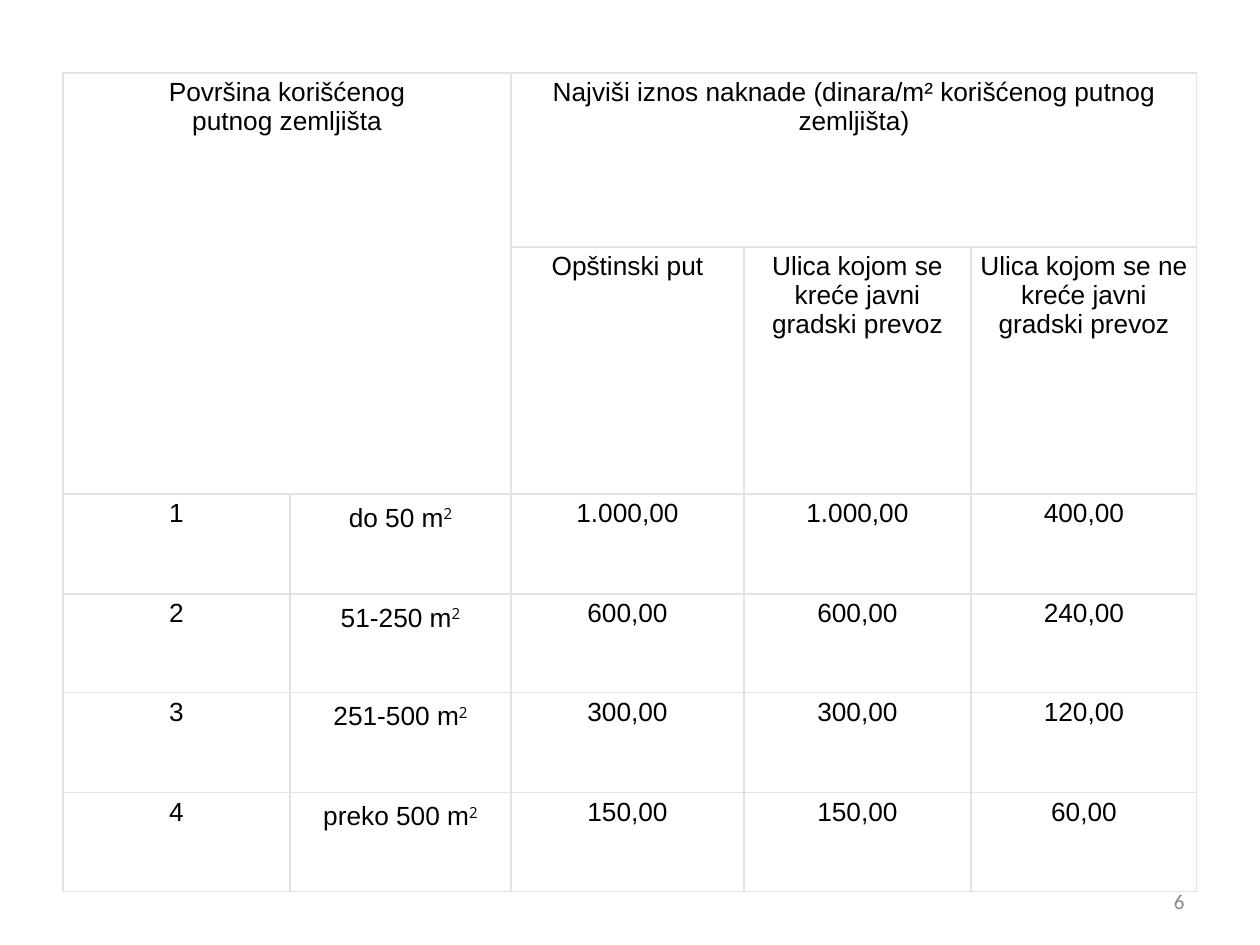
from dataclasses import dataclass

from lxml import etree
from pptx import Presentation
from pptx.dml.color import RGBColor
from pptx.enum.text import MSO_ANCHOR, PP_ALIGN
from pptx.oxml.ns import qn
from pptx.util import Emu, Pt

CENTER, RIGHT = PP_ALIGN.CENTER, PP_ALIGN.RIGHT
TOP, MIDDLE = MSO_ANCHOR.TOP, MSO_ANCHOR.MIDDLE
PX_PER_INCH = 126
COLORS = {"text": "000000", "number": "898989", "border": "E2E2E2", "cell": "FFFFFF"}

COL_WIDTHS = (227, 221, 233, 227, 226)
ROW_HEIGHTS = (174, 247, 100, 99, 100, 99)
CELL_MARGIN = 5


@dataclass(frozen=True)
class Header:
    row: int
    col: int
    lines: tuple[str, ...]
    row_span: int = 1
    col_span: int = 1


@dataclass(frozen=True)
class Rate:
    area: str
    municipal_road: str
    transit_street: str
    other_street: str


HEADERS = (
    Header(0, 0, ("Površina korišćenog", "putnog zemljišta"), 2, 2),
    Header(0, 2, ("Najviši iznos naknade (dinara/m² korišćenog putnog zemljišta)",), 1, 3),
    Header(1, 2, ("Opštinski put",)),
    Header(1, 3, ("Ulica kojom se kreće javni gradski prevoz",)),
    Header(1, 4, ("Ulica kojom se ne kreće javni gradski prevoz",)),
)
RATES = (
    Rate("do 50 m", "1.000,00", "1.000,00", "400,00"),
    Rate("51-250 m", "600,00", "600,00", "240,00"),
    Rate("251-500 m", "300,00", "300,00", "120,00"),
    Rate("preko 500 m", "150,00", "150,00", "60,00"),
)


def px(n: int) -> Emu:
    return Emu(round(n * 914400 / PX_PER_INCH))


def add_run(p, text: str, size: int = 15, font: str = "Arial", color: str = "text"):
    r = p.add_run()
    r.text = text
    r.font.size = Pt(size)
    r.font.name = font
    r.font.color.rgb = RGBColor.from_string(COLORS[color])
    return r


def add_superscript(p, text: str) -> None:
    r = add_run(p, text, font="Open Sans")
    r._r.get_or_add_rPr().set("baseline", "30000")


def set_borders(cell) -> None:
    """Draw all four edges; the line elements must precede the fill."""
    tc_pr = cell._tc.get_or_add_tcPr()
    for i, edge in enumerate(("a:lnL", "a:lnR", "a:lnT", "a:lnB")):
        ln = etree.Element(qn(edge), w=str(Pt(0.75)))
        fill = etree.SubElement(ln, qn("a:solidFill"))
        etree.SubElement(fill, qn("a:srgbClr"), val=COLORS["border"])
        tc_pr.insert(i, ln)


def style_cell(cell) -> None:
    cell.margin_left = cell.margin_right = px(CELL_MARGIN)
    cell.margin_top = cell.margin_bottom = px(CELL_MARGIN)
    cell.vertical_anchor = TOP
    cell.fill.solid()
    cell.fill.fore_color.rgb = RGBColor.from_string(COLORS["cell"])
    set_borders(cell)
    cell.text_frame.paragraphs[0].alignment = CENTER


def fill_header(table, header: Header) -> None:
    cell = table.cell(header.row, header.col)
    if header.row_span * header.col_span > 1:
        cell.merge(table.cell(header.row + header.row_span - 1,
                              header.col + header.col_span - 1))
    p = cell.text_frame.paragraphs[0]
    for i, line in enumerate(header.lines):
        if i:
            p.add_line_break()
        add_run(p, line)


def fill_rate(table, number: int, rate: Rate) -> None:
    values = (str(number), rate.area, rate.municipal_road,
              rate.transit_street, rate.other_street)
    for col, value in enumerate(values):
        p = table.cell(number + 1, col).text_frame.paragraphs[0]
        add_run(p, value)
        if value == rate.area:
            add_superscript(p, "2")


def add_fee_table(slide) -> None:
    frame = slide.shapes.add_table(len(ROW_HEIGHTS), len(COL_WIDTHS), px(63), px(73),
                                   px(sum(COL_WIDTHS)), px(sum(ROW_HEIGHTS)))
    table = frame.table
    table.first_row = table.horz_banding = False
    for column, width in zip(table.columns, COL_WIDTHS):
        column.width = px(width)
    for row, height in zip(table.rows, ROW_HEIGHTS):
        row.height = px(height)
    for cell in table.iter_cells():
        style_cell(cell)
    for header in HEADERS:
        fill_header(table, header)
    for number, rate in enumerate(RATES, start=1):
        fill_rate(table, number, rate)


def add_slide_number(slide, number: int) -> None:
    tf = slide.shapes.add_textbox(px(903), px(876), px(294), px(50)).text_frame
    tf.word_wrap = True
    tf.vertical_anchor = MIDDLE
    p = tf.paragraphs[0]
    p.alignment = RIGHT
    add_run(p, str(number), size=12, font="Calibri", color="number")


def main() -> None:
    prs = Presentation()
    prs.slide_width, prs.slide_height = px(1260), px(945)
    slide = prs.slides.add_slide(prs.slide_layouts[6])
    add_slide_number(slide, 6)
    add_fee_table(slide)
    prs.save("out.pptx")


if __name__ == "__main__":
    main()
